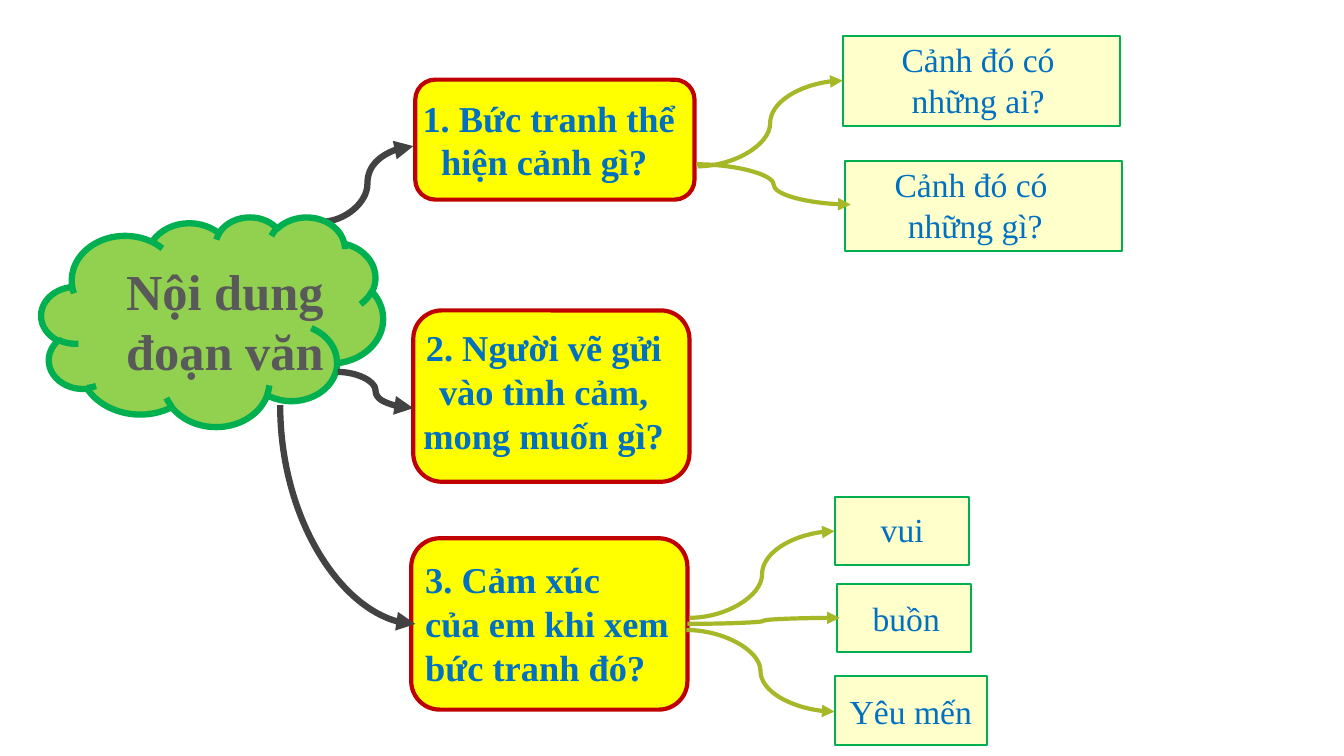
from lxml import etree
from pptx import Presentation
from pptx.dml.color import RGBColor
from pptx.enum.shapes import MSO_CONNECTOR, MSO_SHAPE
from pptx.enum.text import MSO_ANCHOR, MSO_AUTO_SIZE, PP_ALIGN
from pptx.oxml.ns import qn
from pptx.util import Inches, Pt

CURVE = MSO_CONNECTOR.CURVE
CLOUD, CARD, LEAF = MSO_SHAPE.CLOUD, MSO_SHAPE.ROUNDED_RECTANGLE, MSO_SHAPE.RECTANGLE
LEFT, CENTER = PP_ALIGN.LEFT, PP_ALIGN.CENTER
MIDDLE = MSO_ANCHOR.MIDDLE
FIT_SHAPE = MSO_AUTO_SIZE.SHAPE_TO_FIT_TEXT

FONT = "Times New Roman"
YELLOW = RGBColor(0xFF, 0xFF, 0x00)
CREAM = RGBColor(0xFF, 0xFF, 0xCC)
LIME = RGBColor(0x92, 0xD0, 0x50)
GREEN = RGBColor(0x00, 0xB0, 0x50)
RED = RGBColor(0xC0, 0x00, 0x00)
BLUE = RGBColor(0x00, 0x70, 0xC0)
GRAY = RGBColor(0x59, 0x59, 0x59)
CHARCOAL = RGBColor(0x42, 0x42, 0x42)
OLIVE = RGBColor(0xA6, 0xB7, 0x27)

CELL = Inches(0.1)
COLUMNS, ROWS = 133.33, 75

TOPICS = [
    ((41.2, 7.9, 27.7, 11.9), (40, 9, 28.9, 9.8), ["1. Bức tranh thể hiện cảnh gì? "], CENTER),
    ((41, 30.8, 27.4, 17), (39.5, 31.8, 28.9, 14.1),
     ["2. Người vẽ gửi vào tình cảm, mong muốn gì?"], CENTER),
    ((40.8, 53.4, 27.4, 17), (41.2, 54.8, 28.9, 14.1),
     ["3. Cảm xúc", "của em khi xem bức tranh đó?"], LEFT),
]
LEAVES = [
    ((83.6, 3.6, 27.5, 8.9), (83.6, 3.4, 27.7, 9.1), ["Cảnh đó có ", "những ai? "]),
    ((83.8, 16, 27.5, 8.9), (82.9, 15.8, 27.7, 9.1), ["Cảnh đó có ", "những gì?"]),
    ((82.8, 49.3, 13.3, 6.8), (82.9, 50, 13.2, 5), ["vui"]),
    ((83, 57.9, 13.3, 6.8), (83.3, 58.8, 13.2, 5), ["buồn"]),
]
LAST_LEAF = (82.8, 67.1, 15.1, 6.8)
LEAF_ARROWS = [
    ((69.2, 16.5), (83.6, 8)),
    ((69.1, 16.3), (84.4, 20.3)),
    ((68.4, 61.3), (82.8, 52.7)),
    ((68.2, 61.9), (83.3, 61.3)),
    ((68.1, 62.5), (82.8, 70.6)),
]


def cells(*counts):
    """Turn counts of grid cells into lengths."""
    return [int(count * CELL) for count in counts]


def add_panel(page, kind, place, fill, line, weight):
    """Add a filled and outlined shape."""
    panel = page.shapes.add_shape(kind, *cells(*place))
    panel.shadow.inherit = False
    panel.fill.solid()
    panel.fill.fore_color.rgb = fill
    panel.line.color.rgb = line
    panel.line.width = Pt(weight)
    return panel


def write(box, lines, size, color, bold=False, align=CENTER):
    """Write each line as one paragraph of the box."""
    frame = box.text_frame
    frame.word_wrap = True
    frame.text = "\n".join(lines)
    for para in frame.paragraphs:
        para.alignment = align
        para.font.name = FONT
        para.font.size = Pt(size)
        para.font.bold = bold
        para.font.color.rgb = color


def add_label(page, place, lines, size, color, bold=False, align=CENTER):
    """Add a text box that grows with its text."""
    box = page.shapes.add_textbox(*cells(*place))
    write(box, lines, size, color, bold, align)
    box.text_frame.auto_size = FIT_SHAPE


def add_arrow(page, start, end, color, weight):
    """Add an S-shaped arrow."""
    arrow = page.shapes.add_connector(CURVE, *cells(*start, *end))
    arrow.line.color.rgb = color
    arrow.line.width = Pt(weight)
    etree.SubElement(arrow.line._get_or_add_ln(), qn("a:tailEnd"), type="triangle")
    etree.SubElement(arrow._element.spPr, qn("a:effectLst"))
    return arrow


def add_bend(page, start, end, color, weight):
    """Add an arrow that leaves downwards and arrives from the left."""
    middle_x, middle_y = (start[0] + end[0]) / 2, (start[1] + end[1]) / 2
    half_width, half_height = (end[1] - start[1]) / 2, (end[0] - start[0]) / 2
    arrow = add_arrow(page, (middle_x + half_width, middle_y - half_height),
                      (middle_x - half_width, middle_y + half_height), color, weight)
    properties = arrow._element.spPr
    properties.find(qn("a:xfrm")).set("rot", str(270 * 60000))
    properties.find(qn("a:prstGeom")).set("prst", "curvedConnector2")


def add_topic(page, place, text_place, lines, align):
    """Add a yellow topic card with its question."""
    add_panel(page, CARD, place, YELLOW, RED, 3)
    add_label(page, text_place, lines, 26, BLUE, True, align)


def add_leaf(page, place):
    """Add a cream answer box."""
    return add_panel(page, LEAF, place, CREAM, GREEN, 1.5)


def main():
    """Build the mind map slide."""
    deck = Presentation()
    deck.slide_width, deck.slide_height = cells(COLUMNS, ROWS)
    page = deck.slides.add_slide(deck.slide_layouts[6])

    add_arrow(page, (31.9, 22), (41, 14.5), CHARCOAL, 4.5)
    add_panel(page, CLOUD, (4.1, 21.5, 33.9, 20.8), LIME, GREEN, 4.5)
    add_label(page, (6.7, 25.3, 31.2, 13.1), ["Nội dung đoạn văn"], 36, GRAY, True)
    for topic in TOPICS:
        add_topic(page, *topic)
    add_arrow(page, (33.5, 36.9), (41, 40.5), CHARCOAL, 4.5)
    add_bend(page, (27.8, 40.2), (41.2, 61.9), CHARCOAL, 4.5)

    for place, text_place, lines in LEAVES:
        add_leaf(page, place)
        add_label(page, text_place, lines, 24, BLUE)
    last_leaf = add_leaf(page, LAST_LEAF)
    write(last_leaf, ["Yêu mến"], 24, BLUE)
    last_leaf.text_frame.vertical_anchor = MIDDLE
    for start, end in LEAF_ARROWS:
        add_arrow(page, start, end, OLIVE, 3)

    deck.save("out.pptx")


if __name__ == "__main__":
    main()
